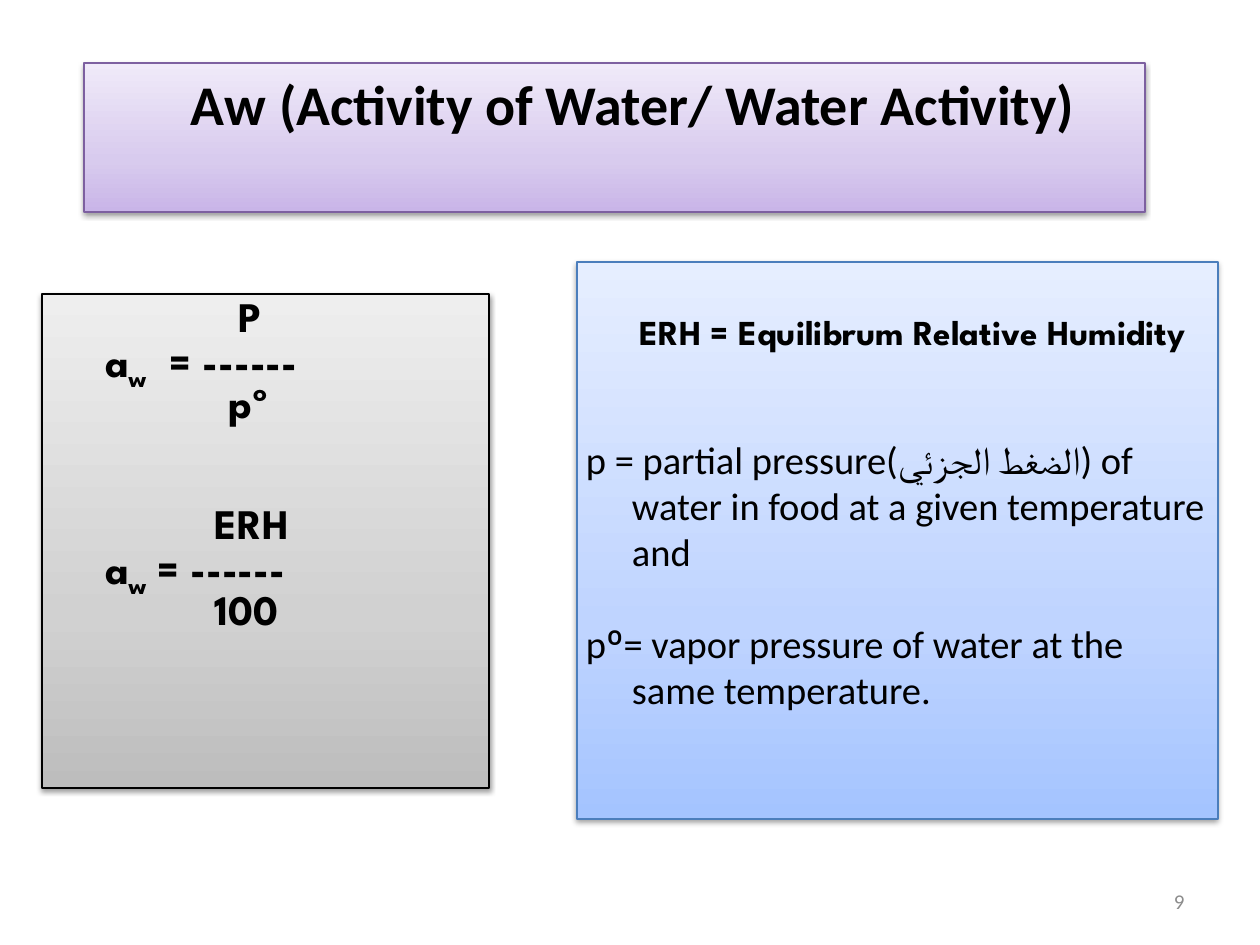
from copy import deepcopy

from lxml.etree import SubElement
from pptx import Presentation
from pptx.dml.color import RGBColor
from pptx.enum.shapes import MSO_SHAPE
from pptx.enum.text import MSO_ANCHOR, MSO_AUTO_SIZE, PP_ALIGN
from pptx.oxml.ns import qn
from pptx.util import Emu, Pt

PX_PER_INCH = 126
BLACK = RGBColor(0x00, 0x00, 0x00)
NUMBER_GRAY = RGBColor(0x8C, 0x8C, 0x8C)
PURPLE_LINE = RGBColor(0x7D, 0x60, 0xA0)
BLUE_LINE = RGBColor(0x4B, 0x7E, 0xBC)
GRAYS = [RGBColor.from_string(c) for c in ("BDBDBD", "D1D1D1", "EEEEEE")]
BLUES = [RGBColor.from_string(c) for c in ("A4C4FF", "BFD4FF", "E6EEFF")]
PURPLES = [RGBColor.from_string(c) for c in ("C9B5E8", "D8CBEE", "F0EAF9")]
STOP_POSITIONS = (0, 0.35, 1)
DISPLAY_FONT = "League Spartan"
BODY_FONT = "Calibri"
SYMBOL_FONT = "Roboto"


def px(length):
    return Emu(round(length * 914400 / PX_PER_INCH))


def place(shape, left, top, width, height):
    shape.left, shape.top = px(left), px(top)
    shape.width, shape.height = px(width), px(height)


def style_box(shape, colors, line_color):
    """Give a three-stop gradient from the bottom up, a thin line and a soft shadow."""
    shape.fill.gradient()
    shape.fill.gradient_angle = 90
    stop_list = shape.element.spPr.find(".//" + qn("a:gsLst"))
    stop_list.append(deepcopy(stop_list[-1]))
    for stop, position, color in zip(shape.fill.gradient_stops, STOP_POSITIONS, colors):
        stop.position = position
        stop.color.rgb = color
    shape.line.color.rgb = line_color
    shape.line.width = Pt(0.75)

    shape.shadow.inherit = False
    effects = shape.element.spPr.find(qn("a:effectLst"))
    shadow = SubElement(effects, qn("a:outerShdw"), blurRad=str(Pt(3.1)),
                        dist=str(Pt(1.6)), dir="5400000", rotWithShape="0")
    color = SubElement(shadow, qn("a:srgbClr"), val=str(BLACK))
    SubElement(color, qn("a:alpha"), val="38000")


def format_run(run, size, font, bold=False, color=BLACK):
    run.font.size = Pt(size)
    run.font.name = font
    run.font.bold = bold
    run.font.color.rgb = color


def add_panel(slide, bounds, colors, line_color, top_margin, right_margin=0):
    panel = slide.shapes.add_shape(MSO_SHAPE.RECTANGLE, *map(px, bounds))
    style_box(panel, colors, line_color)
    frame = panel.text_frame
    frame.word_wrap = True
    frame.vertical_anchor = MSO_ANCHOR.TOP
    frame.margin_left = 0
    frame.margin_right = px(right_margin)
    frame.margin_top = px(top_margin)
    return frame


def add_paragraph(frame, texts, size, font, bold=False, margin=0, indent=0, before=0):
    """Append a left-aligned paragraph of runs, using the empty first one if free."""
    first = frame.paragraphs[0]
    paragraph = frame.add_paragraph() if first.runs else first
    paragraph.alignment = PP_ALIGN.LEFT
    paragraph.space_before = Pt(before)
    properties = paragraph._p.get_or_add_pPr()
    properties.set("marL", str(px(margin)))
    properties.set("indent", str(px(indent)))
    for text in texts:
        run = paragraph.add_run()
        run.text = text
        format_run(run, size, font, bold)
    return paragraph


def add_title(slide):
    title = slide.shapes.title
    place(title, 84, 63, 1061, 149)
    style_box(title, PURPLES, PURPLE_LINE)
    frame = title.text_frame
    frame.text = "Aw (Activity of Water/ Water Activity)"
    frame.auto_size = MSO_AUTO_SIZE.NONE
    frame.vertical_anchor = MSO_ANCHOR.TOP
    frame.margin_left = px(50)
    frame.paragraphs[0].alignment = PP_ALIGN.CENTER
    format_run(frame.paragraphs[0].runs[0], 32, BODY_FONT, bold=True)


def add_formulas(slide):
    frame = add_panel(slide, (42, 294, 447, 494), GRAYS, BLACK, top_margin=6)
    equation = ("a", "w", " = ------")
    lines = [
        (("P",), 196, 0), (equation, 63, 0), (("pº",), 186, 0),
        (("ERH",), 173, 46), (equation, 63, 0), (("100",), 173, 0),
    ]
    for texts, margin, before in lines:
        paragraph = add_paragraph(frame, texts, 24, DISPLAY_FONT, bold=True,
                                  margin=margin, before=before)
        paragraph.line_spacing = 0.8
        if texts is equation:
            subscript = paragraph.runs[1].font
            subscript._element.set("baseline", "-25000")
    # The first equation has a wider gap before its equals sign.
    frame.paragraphs[1].runs[1].font._element.set("spc", "690")


def add_definitions(slide):
    frame = add_panel(slide, (577, 262, 641, 557), BLUES, BLUE_LINE,
                      top_margin=48, right_margin=8)
    add_paragraph(frame, ["ERH = Equilibrum Relative Humidity"], 20, DISPLAY_FONT,
                  bold=True, margin=63)
    hanging = {"margin": 55, "indent": -46}
    partial = "p = partial pressure(الضغط الجزئي) of water in food at a given temperature and"
    paragraph = add_paragraph(frame, [partial], 22, BODY_FONT, before=48, **hanging)
    SubElement(paragraph.runs[0].font._element, qn("a:cs"), typeface=BODY_FONT)
    vapor = ["p", "º", "= vapor pressure of water at the same temperature."]
    paragraph = add_paragraph(frame, vapor, 22, BODY_FONT, before=26, **hanging)
    paragraph.runs[1].font.name = SYMBOL_FONT


def add_slide_number(slide):
    frame = slide.shapes.add_textbox(*map(px, (903, 876, 294, 50))).text_frame
    frame.text = "9"
    frame.word_wrap = True
    frame.vertical_anchor = MSO_ANCHOR.MIDDLE
    frame.paragraphs[0].alignment = PP_ALIGN.RIGHT
    format_run(frame.paragraphs[0].runs[0], 12, BODY_FONT, color=NUMBER_GRAY)


def main():
    presentation = Presentation()
    presentation.slide_width, presentation.slide_height = px(1260), px(945)
    slide = presentation.slides.add_slide(presentation.slide_layouts[5])
    add_title(slide)
    add_formulas(slide)
    add_definitions(slide)
    add_slide_number(slide)
    presentation.save("out.pptx")


if __name__ == "__main__":
    main()
